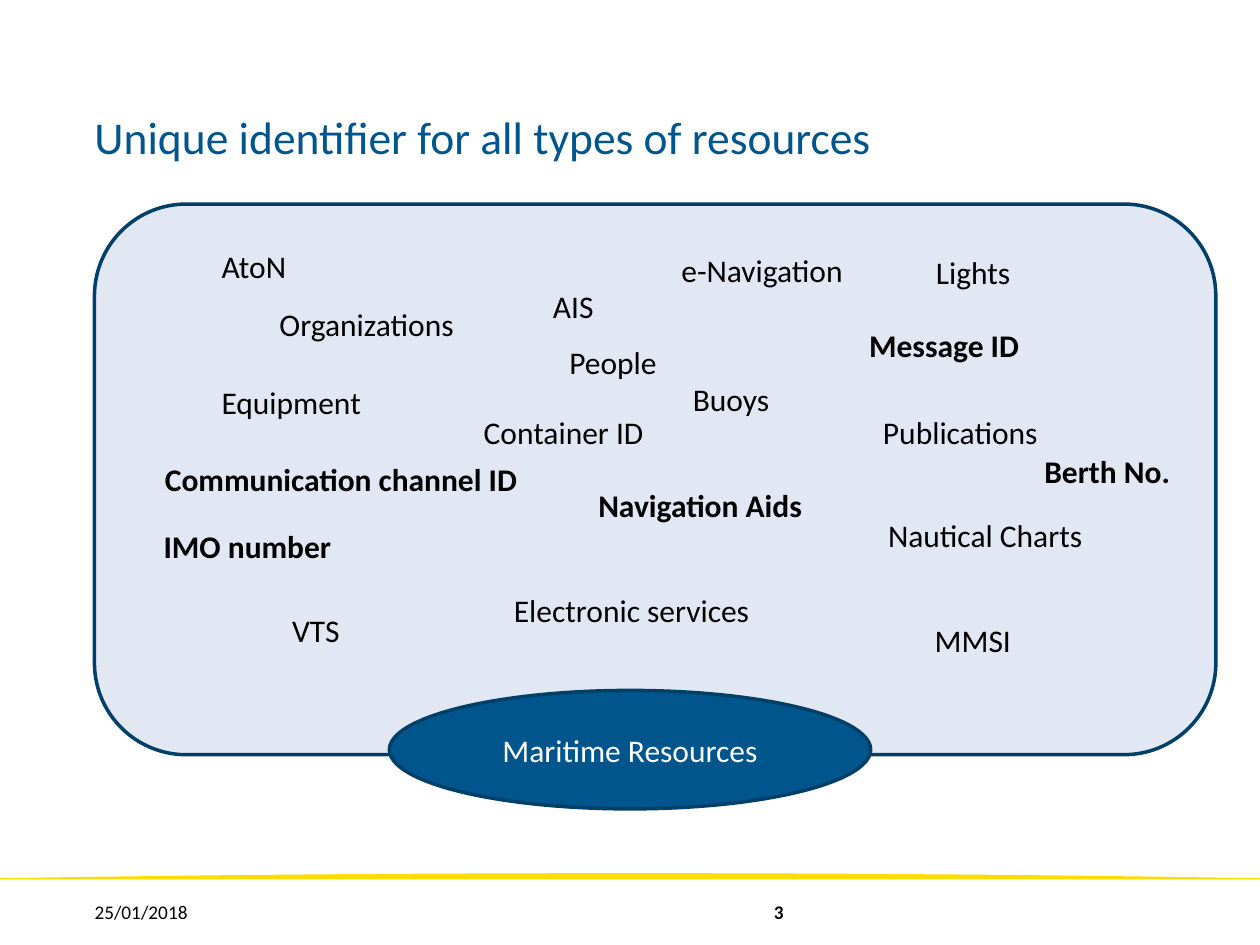
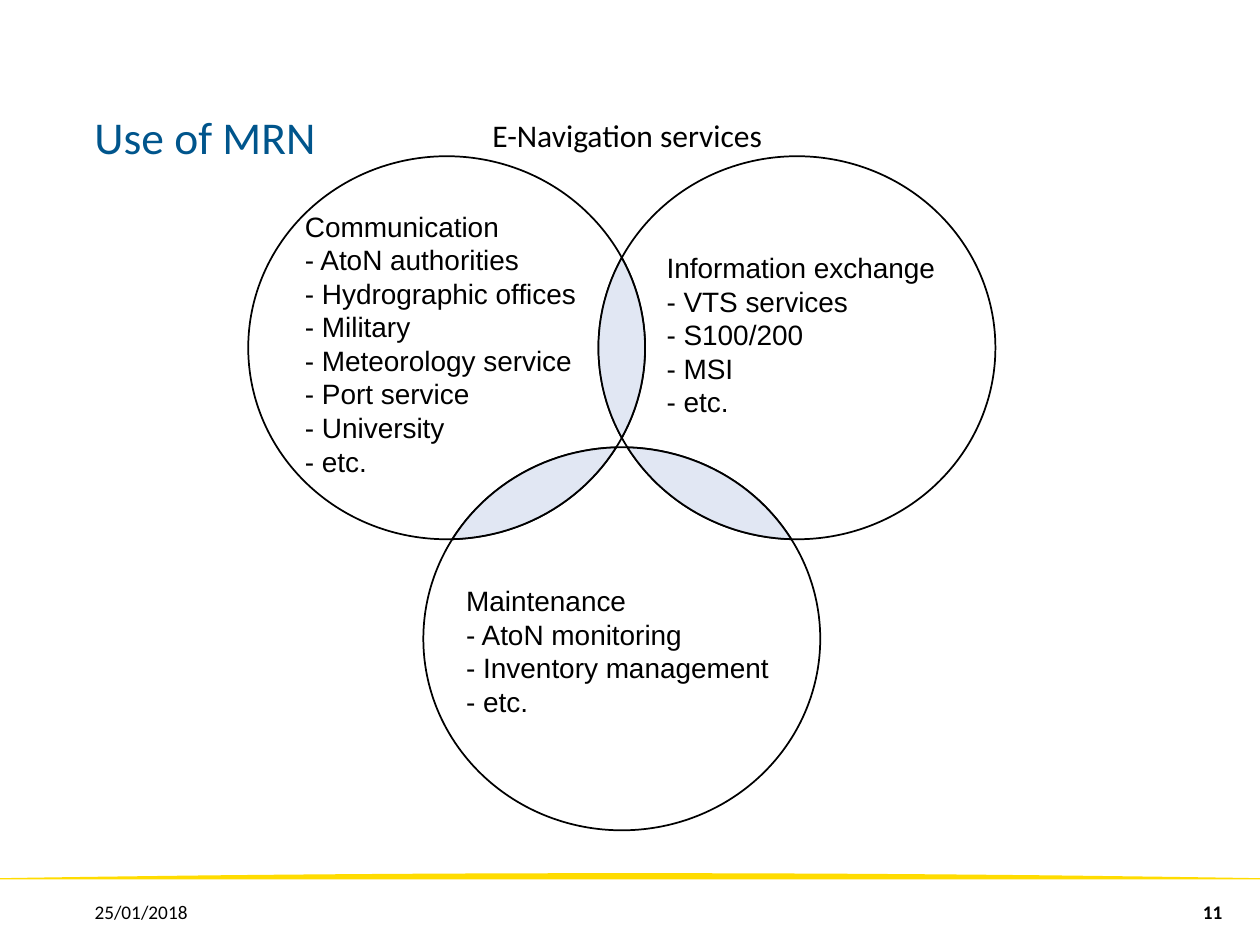
import math
from dataclasses import dataclass

from pptx import Presentation
from pptx import util as u
from pptx.dml.color import RGBColor
from pptx.enum import shapes, text


@dataclass(frozen=True)
class Theme:
    blue: str = "00558C"
    navy: str = "003F68"
    pale: str = "E1E7F3"
    yellow: str = "FFDC00"
    black: str = "000000"
    white: str = "FFFFFF"
    font: str = "Calibri"
    list_font: str = "Arial"
    title_size: int = 26
    label_size: int = 18
    list_size: int = 16
    footer_size: int = 11


THEME = Theme()
EMU_PER_PX = 9144  # 100 px to the inch
SLIDE_WIDTH, SLIDE_HEIGHT = 1000, 750

DATE = "25/01/2018"
TITLE_BOX = (75, 28, 850, 102)
DATE_BOX = (75, 698, 232, 52)

RESOURCES = {
    "title": "Unique identifier for all types of resources",
    "number": "3",
    "number_box": (311, 698, 614, 52),
    "panel": (75, 162, 890, 437),
    "hub": ("Maritime Resources", (309, 548, 382, 94)),
    # wording, left, top, width, bold
    "labels": [
        ("AtoN", 166, 191, 72, False),
        ("Equipment", 166, 299, 132, False),
        ("AIS", 429, 223, 53, False),
        ("e-Navigation", 531, 194, 150, False),
        ("Publications", 691, 323, 144, False),
        ("Nautical Charts", 695, 405, 176, False),
        ("IMO number", 120, 413, 154, True),
        ("Container ID", 374, 323, 149, False),
        ("Navigation Aids", 465, 381, 183, True),
        ("MMSI", 732, 488, 81, False),
        ("VTS", 222, 480, 58, False),
        ("Lights", 733, 196, 80, False),
        ("Buoys", 540, 297, 81, False),
        ("Organizations", 212, 237, 160, False),
        ("People", 442, 267, 90, False),
        ("Electronic services", 398, 464, 209, False),
        ("Message ID", 680, 254, 140, True),
        ("Berth No.", 819, 354, 121, True),
        ("Communication channel ID", 121, 360, 302, True),
    ],
}

USES = {
    "title": "Use of MRN",
    "number": "11",
    "number_box": (925, 698, 75, 52),
    "heading": ("E-Navigation services", 381, 87, 237, False),
    "circle_size": (315, 304),
    # circle corner, text box, lines
    "circles": [
        ((336, 355), (370, 428, 248, 177),
         ["Maintenance", "- AtoN monitoring", "- Inventory management", "- etc."]),
        ((197, 124), (242, 213, 248, 119),
         ["Communication", "- AtoN authorities", "- Hydrographic offices", "- Military",
          "- Meteorology service", "- Port service", "- University", "- etc."]),
        ((475, 124), (529, 177, 258, 177),
         ["Information exchange", "- VTS services", "- S100/200", "- MSI", "- etc."]),
    ],
}


def px(*lengths):
    return [u.Emu(round(length * EMU_PER_PX)) for length in lengths]


def paint(shape, fill=None, line=None, line_width=1):
    shape.shadow.inherit = False
    if fill:
        shape.fill.solid()
        shape.fill.fore_color.rgb = RGBColor.from_string(fill)
    else:
        shape.fill.background()
    if line:
        shape.line.color.rgb = RGBColor.from_string(line)
        shape.line.width = u.Pt(line_width)
    else:
        shape.line.fill.background()


def write(shape, lines, size, color=THEME.black, font=THEME.font, bold=False,
          align=text.PP_ALIGN.LEFT, anchor=text.MSO_ANCHOR.MIDDLE):
    frame = shape.text_frame
    frame.text = "\n".join(lines)
    frame.vertical_anchor = anchor
    for paragraph in frame.paragraphs:
        paragraph.alignment = align
        for run in paragraph.runs:
            run.font.name = font
            run.font.size = u.Pt(size)
            run.font.bold = bold
            run.font.color.rgb = RGBColor.from_string(color)


def add_text(slide, box, lines, size, **style):
    """Add a text box without insets."""
    shape = slide.shapes.add_textbox(*px(*box))
    frame = shape.text_frame
    frame.word_wrap = True
    frame.margin_left = frame.margin_top = frame.margin_right = frame.margin_bottom = 0
    write(shape, lines, size, **style)


def add_label(slide, wording, left, top, width, bold):
    shape = slide.shapes.add_textbox(*px(left, top, width, 40))
    shape.text_frame.word_wrap = False
    shape.text_frame.auto_size = text.MSO_AUTO_SIZE.SHAPE_TO_FIT_TEXT
    write(shape, [wording], THEME.label_size, bold=bold, anchor=text.MSO_ANCHOR.TOP)


def add_outline(slide, points, **style):
    start, *rest = [px(*point) for point in points]
    builder = slide.shapes.build_freeform(*start, scale=1.0)
    builder.add_line_segments(rest, close=True)
    paint(builder.convert_to_shape(), **style)


def add_footer_band(slide, steps=40):
    ends = [-1 + 2 * step / steps for step in range(steps + 1)]
    arc = [((1 + t) * SLIDE_WIDTH / 2, 693 + 4 * t * t) for t in ends]
    add_outline(slide, [(0, 698), *arc, (SLIDE_WIDTH, 698)], fill=THEME.yellow)


def add_base_slide(presentation, content):
    """Add a blank slide with the shared band, title and footer."""
    slide = presentation.slides.add_slide(presentation.slide_layouts[6])
    add_footer_band(slide)
    add_text(slide, TITLE_BOX, [content["title"]], THEME.title_size,
             color=THEME.blue, anchor=text.MSO_ANCHOR.BOTTOM)
    add_text(slide, DATE_BOX, [DATE], THEME.footer_size)
    add_text(slide, content["number_box"], [content["number"]], THEME.footer_size,
             bold=True, align=text.PP_ALIGN.CENTER)
    return slide


def lens(first, second, radii, steps=24):
    """Outline of the overlap of two equal ellipses, given by their centres."""
    rx, ry = radii
    dx, dy = (second[0] - first[0]) / rx, (second[1] - first[1]) / ry
    half = math.acos(math.hypot(dx, dy) / 2)
    direction = math.atan2(dy, dx)
    points = []
    for (x, y), middle in ((first, direction), (second, direction + math.pi)):
        for step in range(steps):
            angle = middle + half * (2 * step / steps - 1)
            points.append((x + rx * math.cos(angle), y + ry * math.sin(angle)))
    return points


def add_resources_slide(presentation):
    slide = add_base_slide(presentation, RESOURCES)
    panel = slide.shapes.add_shape(shapes.MSO_SHAPE.ROUNDED_RECTANGLE, *px(*RESOURCES["panel"]))
    paint(panel, THEME.pale, THEME.navy, 2)
    wording, box = RESOURCES["hub"]
    hub = slide.shapes.add_shape(shapes.MSO_SHAPE.OVAL, *px(*box))
    paint(hub, THEME.blue, THEME.navy, 2)
    write(hub, [wording], THEME.label_size, color=THEME.white, align=text.PP_ALIGN.CENTER)
    for label in RESOURCES["labels"]:
        add_label(slide, *label)


def add_uses_slide(presentation):
    slide = add_base_slide(presentation, USES)
    width, height = USES["circle_size"]
    radii = (width / 2, height / 2)
    centres = []
    for (left, top), _, _ in USES["circles"]:
        circle = slide.shapes.add_shape(shapes.MSO_SHAPE.OVAL, *px(left, top, width, height))
        paint(circle, line=THEME.black)
        centres.append((left + radii[0], top + radii[1]))
    for index, centre in enumerate(centres):
        add_outline(slide, lens(centre, centres[index - 1], radii),
                    fill=THEME.pale, line=THEME.black)
    for _, box, lines in USES["circles"]:
        add_text(slide, box, lines, THEME.list_size, font=THEME.list_font)
    add_label(slide, *USES["heading"])


def main():
    presentation = Presentation()
    presentation.slide_width, presentation.slide_height = px(SLIDE_WIDTH, SLIDE_HEIGHT)
    add_resources_slide(presentation)
    add_uses_slide(presentation)
    presentation.save("out.pptx")


if __name__ == "__main__":
    main()
